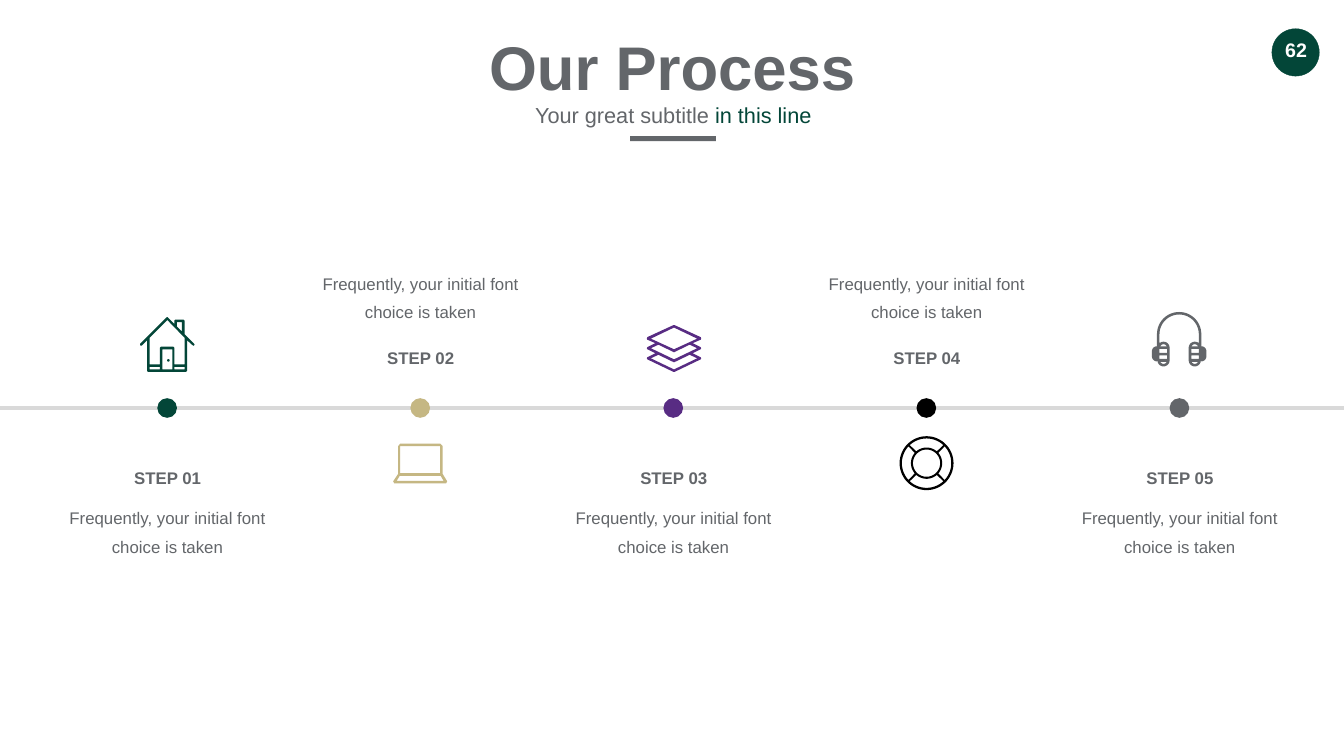
import math
from dataclasses import dataclass

from lxml import etree
from pptx import Presentation, util as u
from pptx.dml.color import RGBColor
from pptx.enum import shapes, text
from pptx.oxml.ns import qn

PX = 9144
GREEN = RGBColor(0x03, 0x46, 0x38)
SAND = RGBColor(0xC5, 0xB7, 0x83)
PURPLE = RGBColor(0x58, 0x2C, 0x83)
BLACK = RGBColor(0, 0, 0)
GRAY = RGBColor(0x63, 0x66, 0x6A)
RAIL = RGBColor(0xD9, 0xD9, 0xD9)
WHITE = RGBColor(0xFF, 0xFF, 0xFF)

Point = tuple[float, float]
Contour = list[Point]


@dataclass
class Step:
    label: str
    color: RGBColor
    icon: list[Contour]
    text_below: bool


@dataclass
class Span:
    words: str
    size: int
    color: RGBColor = GRAY
    bold: bool = False


def rect(left: int, top: int, right: int, bottom: int) -> Contour:
    return [(left, top), (right, top), (right, bottom), (left, bottom)]


def arc(x: int, y: int, radius: float, start: int, end: int) -> Contour:
    count = max(4, abs(end - start) // 6)
    angles = [math.radians(start + (end - start) * i / count) for i in range(count + 1)]
    return [(x + radius * math.cos(a), y + radius * math.sin(a)) for a in angles]


def flip(contour: Contour, axis: int) -> Contour:
    return [(2 * axis - x, y) for x, y in reversed(contour)]


def symmetric(half: Contour, axis: int) -> Contour:
    return half + flip(half, axis)


def house() -> list[Contour]:
    return [
        [(385, 682), (366, 663), (366, 636), (364, 634), (348, 634), (346, 636),
         (346, 643), (333, 630), (332, 629), (330, 630), (278, 682), (278, 685),
         (280, 686), (282, 685), (292, 675), (292, 736), (294, 738), (369, 738),
         (371, 736), (371, 675), (382, 685), (384, 686), (386, 684)],
        [(366, 723), (346, 723), (346, 690), (344, 688), (319, 688), (317, 690),
         (317, 723), (297, 723), (297, 670), (332, 635), (366, 670)],
        rect(346, 728, 366, 733), rect(322, 693, 342, 733), rect(297, 728, 317, 733),
        [(351, 639), (361, 639), (361, 658), (351, 648)],
        arc(334, 715, 2.5, 0, 360),
    ]


def laptop() -> list[Contour]:
    return [
        [(780, 955), (790, 940), (790, 885), (794, 880), (873, 880), (878, 885),
         (878, 940), (887, 955), (885, 959), (782, 959)],
        rect(794, 885, 873, 939),
        [(787, 954), (793, 944), (874, 944), (880, 954)],
    ]


def layers() -> list[Contour]:
    axis = 1337
    outline = [(1338, 645), (1390, 669), (1391, 672), (1390, 674), (1374, 681),
               (1390, 689), (1391, 691), (1390, 693), (1374, 701),
               (1390, 709), (1391, 711), (1390, 713), (1338, 738)]
    sheets = [[(axis, 650), (1383, 672), (axis, 693)]]
    for drop in (0, 20):
        sheets.append([(axis, 699 + drop), (1368, 684 + drop),
                       (1383, 691 + drop), (axis, 713 + drop)])
    return [symmetric(half, axis) for half in [outline, *sheets]]


def lifebuoy() -> list[Contour]:
    x, y = 1838, 919
    sectors = [arc(x, y, 49, turn - 43, turn + 43) + arc(x, y, 31, turn + 41, turn - 41)
               for turn in range(0, 360, 90)]
    return [arc(x, y, 53.5, 0, 360), *sectors, arc(x, y, 27, 0, 360)]


def headphones() -> list[Contour]:
    axis = 2339
    outline = (arc(axis, 663, 44, -90, 0) + arc(2383, 697, 10, -90, 0)
               + arc(2383, 707, 10, 0, 90) + arc(2370, 715, 12, 0, 180)
               + arc(2370, 690, 12, 180, 300) + [(2378, 680)]
               + arc(axis, 663, 39, 0, -90))
    cushion = [rect(2363, 692, 2378, 700), rect(2363, 705, 2378, 712),
               arc(2370, 690, 7, 205, 335), arc(2370, 715, 7, 25, 155)]
    return [symmetric(outline, axis), *cushion, *(flip(part, axis) for part in cushion)]


def paint(shape, color: RGBColor) -> None:
    shape.shadow.inherit = False
    shape.fill.solid()
    shape.fill.fore_color.rgb = color
    shape.line.fill.background()


def draw_shape(page, kind, left: int, top: int, width: int, height: int, color: RGBColor):
    shape = page.shapes.add_shape(kind, left * PX, top * PX, width * PX, height * PX)
    paint(shape, color)
    return shape


def draw_icon(page, contours: list[Contour], color: RGBColor) -> None:
    first, *others = contours
    builder = page.shapes.build_freeform(first[0][0] * PX, first[0][1] * PX)
    builder.add_line_segments([(x * PX, y * PX) for x, y in first[1:]])
    for contour in others:
        builder.move_to(contour[0][0] * PX, contour[0][1] * PX)
        builder.add_line_segments([(x * PX, y * PX) for x, y in contour[1:]])
    paint(builder.convert_to_shape(), color)


def write(box, spans: list[Span], inset: tuple[int, int] = (10, 5), wrap: bool = False,
          anchor=text.MSO_ANCHOR.TOP, spacing=1.0) -> None:
    across, down = inset
    frame = box.text_frame
    frame_format = {
        "margin_left": across * PX, "margin_right": across * PX,
        "margin_top": down * PX, "margin_bottom": down * PX,
        "word_wrap": wrap, "vertical_anchor": anchor,
        "auto_size": text.MSO_AUTO_SIZE.SHAPE_TO_FIT_TEXT,
    }
    for name, value in frame_format.items():
        setattr(frame, name, value)
    para = frame.paragraphs[0]
    para.alignment = text.PP_ALIGN.CENTER
    para.line_spacing = spacing
    for span in spans:
        run = para.add_run()
        run.text = span.words
        for name, value in {"name": "Arial", "size": u.Pt(span.size), "bold": span.bold}.items():
            setattr(run.font, name, value)
        run.font.color.rgb = span.color


def draw_text(page, left: int, top: int, width: int, height: int,
              spans: list[Span], **layout) -> None:
    box = page.shapes.add_textbox(left * PX, top * PX, width * PX, height * PX)
    write(box, spans, **layout)


def draw_step(page, step: Step, center: int) -> None:
    draw_shape(page, shapes.MSO_SHAPE.OVAL, center - 20, 790, 39, 39, step.color)
    draw_icon(page, step.icon, step.color)
    label_top, body_top = (923, 980) if step.text_below else (684, 515)
    draw_text(page, center - 78, label_top, 157, 50, [Span(step.label, 24, bold=True)],
              anchor=text.MSO_ANCHOR.MIDDLE)
    draw_text(page, center - 249, body_top, 498, 131,
              [Span("Frequently, your initial font choice is taken", 24)],
              inset=(24, 12), wrap=True, spacing=u.Pt(40.4))


def main() -> None:
    deck = Presentation()
    deck.slide_width, deck.slide_height = 2666 * PX, 1500 * PX
    page = deck.slides.add_slide(deck.slide_layouts[5])

    title = page.shapes.title
    for name, value in {"left": 956, "top": 53, "width": 755, "height": 158}.items():
        setattr(title, name, value * PX)
    write(title, [Span("Our Process", 88, bold=True)])
    draw_text(page, 1034, 179, 603, 81,
              [Span("Your great subtitle ", 31), Span("in this line", 31, GREEN)],
              inset=(24, 12), spacing=1.2)
    draw_shape(page, shapes.MSO_SHAPE.RECTANGLE, 1250, 270, 170, 10, GRAY)

    badge = draw_shape(page, shapes.MSO_SHAPE.OVAL, 2523, 57, 94, 94, GREEN)
    badge.line.color.rgb = GREEN
    badge.line.width = u.Pt(0.5)
    draw_text(page, 2527, 66, 88, 67, [Span("62", 28, WHITE, True)], inset=(20, 10))

    rail = page.shapes.add_connector(shapes.MSO_CONNECTOR.STRAIGHT,
                                     0, 810 * PX, 2666 * PX, 810 * PX)
    rail.line.color.rgb = RAIL
    rail.line.width = u.Pt(6)
    etree.SubElement(rail._element.spPr, qn("a:effectLst"))

    steps = [
        Step("STEP 01", GREEN, house(), True),
        Step("STEP 02", SAND, laptop(), False),
        Step("STEP 03", PURPLE, layers(), True),
        Step("STEP 04", BLACK, lifebuoy(), False),
        Step("STEP 05", GRAY, headphones(), True),
    ]
    for index, step in enumerate(steps):
        draw_step(page, step, 332 + 502 * index)

    deck.save("out.pptx")


if __name__ == "__main__":
    main()
